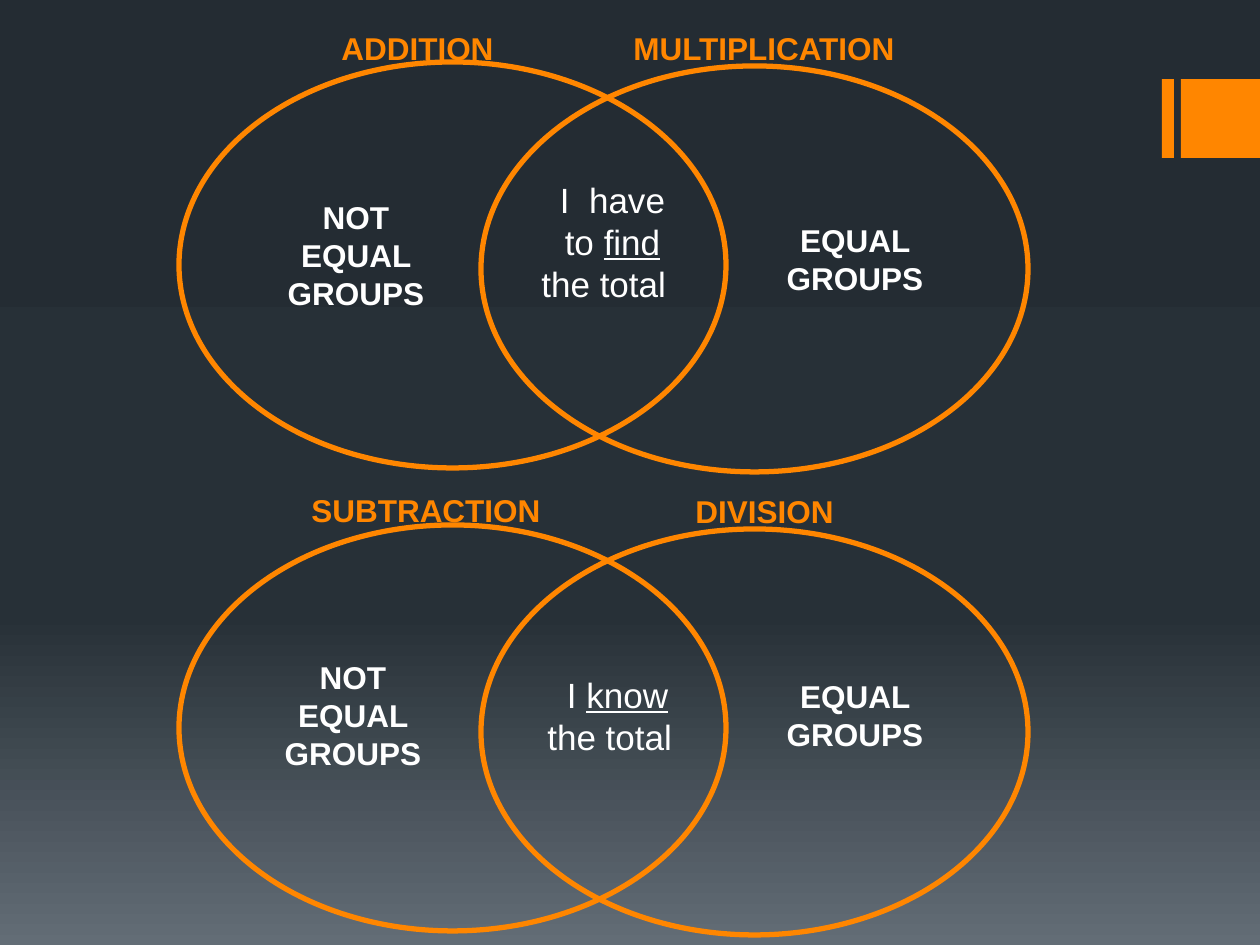
import copy

from pptx import Presentation, util as u
from pptx.dml.color import RGBColor
from pptx.enum import shapes, text
from pptx.oxml.ns import qn

PX = u.Inches(1) / 126
COLORS = {
    "accent": "FF8600",
    "words": "FFFFFF",
    "sky_top": "242C33",
    "sky_middle": "273037",
    "sky_bottom": "636D76",
}


def px(*lengths):
    return [u.Emu(round(length * PX)) for length in lengths]


def add_words(place, paragraphs, size, color, bold=False):
    box = slide.shapes.add_textbox(*px(*place))
    frame = box.text_frame
    frame.word_wrap = True
    frame.auto_size = text.MSO_AUTO_SIZE.SHAPE_TO_FIT_TEXT
    for index, (align, runs) in enumerate(paragraphs):
        line = frame.add_paragraph() if index else frame.paragraphs[0]
        line.alignment = align
        for words, underline in runs:
            run = line.add_run()
            run.text = words
            run.font.name = "Arial"
            run.font.size = u.Pt(size)
            run.font.bold = bold
            run.font.underline = underline
            run.font.color.rgb = RGBColor.from_string(COLORS[color])


LEFT, CENTER = text.PP_ALIGN.LEFT, text.PP_ALIGN.CENTER

deck = Presentation()
deck.slide_width, deck.slide_height = px(1260, 945)
slide = deck.slides.add_slide(deck.slide_layouts[6])

sky = slide.background.fill
sky.gradient()
sky.gradient_angle = 270
stop_list = next(slide.element.iter(qn("a:gsLst")))
stop_list.insert(1, copy.deepcopy(stop_list[0]))
sky_stops = [("sky_top", 0), ("sky_middle", 0.65), ("sky_bottom", 1)]
for stop, (color, position) in zip(sky.gradient_stops, sky_stops):
    stop.color.rgb = RGBColor.from_string(COLORS[color])
    stop.position = position

for left, width in [(1162, 12), (1181, 79)]:
    bar = slide.shapes.add_shape(shapes.MSO_SHAPE.RECTANGLE, *px(left, 79, width, 79))
    bar.shadow.inherit = False
    bar.fill.solid()
    bar.fill.fore_color.rgb = RGBColor.from_string(COLORS["accent"])
    bar.line.fill.background()

for top in (62, 525):
    venn = slide.shapes.add_group_shape()
    for left, drop in [(179, 0), (481, 4)]:
        circle = venn.shapes.add_shape(
            shapes.MSO_SHAPE.OVAL, *px(left, top + drop, 547, 406))
        circle.shadow.inherit = False
        circle.fill.background()
        circle.line.color.rgb = RGBColor.from_string(COLORS["accent"])
        circle.line.width = u.Pt(3)

shared_ideas = [
    ((535, 667, 165, 97), [("I ", False), ("know", True)]),
    ((529, 172, 167, 140), [("I  have to ", False), ("find", True)]),
]
for place, opening in shared_ideas:
    add_words(place, [(CENTER, opening), (LEFT, [("the total", False)])], 20, "words")

group_kinds = [
    ((755, 215, 200, 89), "EQUAL GROUPS"),
    ((755, 671, 200, 89), "EQUAL GROUPS"),
    ((256, 192, 200, 127), "NOT EQUAL GROUPS"),
    ((253, 652, 200, 127), "NOT EQUAL GROUPS"),
]
for place, kind in group_kinds:
    add_words(place, [(CENTER, [(kind, False)])], 18, "words", bold=True)

operations = [
    ((329, 23, 210, 50), "ADDITION"),
    ((299, 485, 270, 50), "SUBTRACTION"),
    ((683, 486, 270, 50), "DIVISION"),
    ((621, 23, 292, 50), "MULTIPLICATION"),
]
for place, operation in operations:
    add_words(place, [(LEFT, [(operation, False)])], 18, "accent", bold=True)

deck.save("out.pptx")
